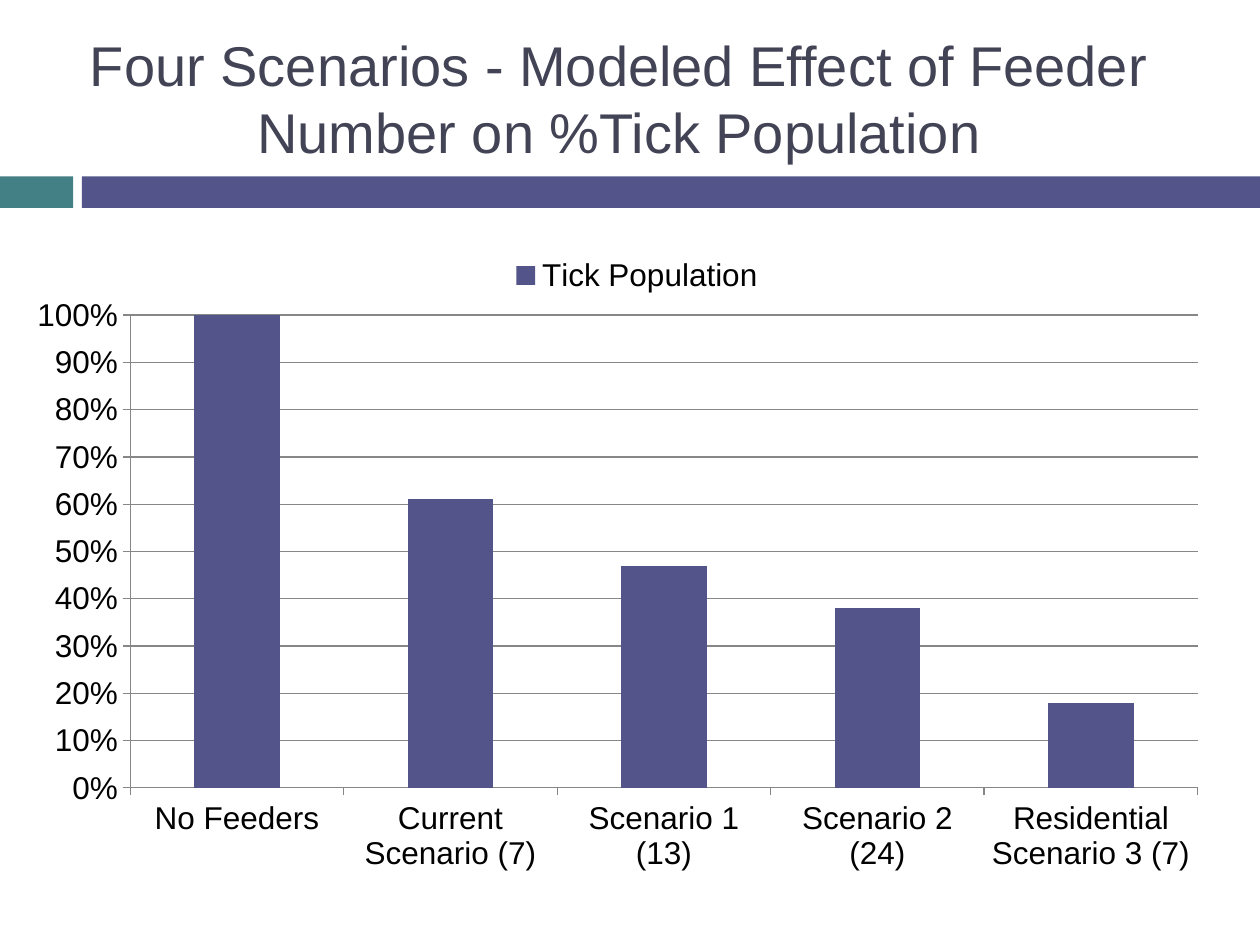
from dataclasses import dataclass

from lxml import etree
from pptx import Presentation
from pptx.chart.data import CategoryChartData
from pptx.dml.color import RGBColor
from pptx.enum.chart import XL_CHART_TYPE, XL_LEGEND_POSITION, XL_TICK_MARK
from pptx.enum.shapes import MSO_SHAPE
from pptx.enum.text import MSO_ANCHOR, MSO_AUTO_SIZE, PP_ALIGN
from pptx.oxml.ns import qn
from pptx.util import Emu, Pt

RECT = MSO_SHAPE.RECTANGLE
COLUMN = XL_CHART_TYPE.COLUMN_CLUSTERED
TOP = XL_LEGEND_POSITION.TOP
OUT = XL_TICK_MARK.OUTSIDE
CENTER = PP_ALIGN.CENTER
MIDDLE = MSO_ANCHOR.MIDDLE
NO_FIT = MSO_AUTO_SIZE.NONE
PX = 9144  # 100 px to the inch


@dataclass(frozen=True)
class Theme:
    font: str = "Arial"
    ink: RGBColor = RGBColor(0x42, 0x44, 0x56)
    text: RGBColor = RGBColor(0, 0, 0)
    teal: RGBColor = RGBColor(0x43, 0x80, 0x86)
    violet: RGBColor = RGBColor(0x53, 0x54, 0x8A)
    grid: RGBColor = RGBColor(0x87, 0x87, 0x87)
    title: int = 32
    label: int = 18


@dataclass(frozen=True)
class Box:
    left: int
    top: int
    width: int
    height: int

    def emu(self) -> list[Emu]:
        return [Emu(n * PX) for n in (self.left, self.top, self.width, self.height)]


@dataclass(frozen=True)
class Band:
    box: Box
    color: RGBColor


THEME = Theme()
BANDS = [
    Band(Box(0, 140, 58, 25), THEME.teal),
    Band(Box(65, 140, 935, 25), THEME.violet),
]
TITLE = "Four Scenarios - Modeled Effect of Feeder Number on %Tick Population"
TICKS = {
    "No Feeders": 1,
    "Current Scenario (7)": 0.61,
    "Scenario 1 (13)": 0.47,
    "Scenario 2 (24)": 0.38,
    "Residential Scenario 3 (7)": 0.18,
}


def draw_band(slide, band: Band) -> None:
    shape = slide.shapes.add_shape(RECT, *band.box.emu())
    shape.shadow.inherit = False
    shape.fill.solid()
    shape.fill.fore_color.rgb = band.color
    shape.line.fill.background()


def set_title(slide, box: Box, text: str) -> None:
    title = slide.shapes.title
    title.left, title.top, title.width, title.height = box.emu()
    frame = title.text_frame
    frame.word_wrap = True
    frame.auto_size = NO_FIT
    frame.vertical_anchor = MIDDLE
    para = frame.paragraphs[0]
    para.alignment = CENTER
    run = para.add_run()
    run.text = text
    run.font.name = THEME.font
    run.font.size = Pt(THEME.title)
    run.font.color.rgb = THEME.ink


def set_layout(layout, inner: bool, **parts: float) -> None:
    """Place a chart part by fractions of the chart's size."""
    manual = etree.SubElement(layout, qn("c:manualLayout"))
    values = {"layoutTarget": "inner"} if inner else {}
    values |= {"xMode": "edge", "yMode": "edge"} | parts
    for tag, value in values.items():
        etree.SubElement(manual, qn(f"c:{tag}")).set("val", str(value))


def draw_chart(slide, box: Box, name: str, values: dict[str, float]) -> None:
    data = CategoryChartData(number_format="0%")
    data.categories = list(values)
    data.add_series(name, list(values.values()))
    chart = slide.shapes.add_chart(COLUMN, *box.emu(), data).chart
    chart.has_title = False
    chart.font.name = THEME.font
    chart.font.size = Pt(THEME.label)
    chart.font.color.rgb = THEME.text

    # Columns
    plot = chart.plots[0]
    plot.vary_by_categories = False
    plot.gap_width = 150
    bars = plot.series[0]
    bars.format.fill.solid()
    bars.format.fill.fore_color.rgb = THEME.violet

    # Axes and grid
    scale = chart.value_axis
    scale.minimum_scale, scale.maximum_scale, scale.major_unit = 0, 1, 0.1
    scale.has_major_gridlines = True
    scale.tick_labels.number_format = "0%"
    scale.tick_labels.number_format_is_linked = False
    for axis in (scale, chart.category_axis):
        axis.major_tick_mark = OUT
    for part in (scale, chart.category_axis, scale.major_gridlines):
        part.format.line.color.rgb = THEME.grid
        part.format.line.width = Pt(0.75)

    # Legend and plot places
    chart.has_legend = True
    legend = chart.legend
    legend.position = TOP
    legend.include_in_layout = False
    area = chart.element.find(".//" + qn("c:plotArea"))
    layout = area.find(qn("c:layout"))
    if layout is None:
        layout = etree.Element(qn("c:layout"))
        area.insert(0, layout)
    set_layout(layout, True, x=0.084, y=0.109, w=0.908, h=0.704)
    node = chart.element.find(".//" + qn("c:legend"))
    spot = node.find(qn("c:layout"))
    if spot is None:
        spot = etree.Element(qn("c:layout"))
        node.find(qn("c:legendPos")).addnext(spot)
    set_layout(spot, False, x=0.4, y=0.01, w=0.23, h=0.08)


def main() -> None:
    deck = Presentation()
    deck.slide_width, deck.slide_height = Emu(1000 * PX), Emu(750 * PX)
    slide = deck.slides.add_slide(deck.slide_layouts[5])

    # Header
    for band in BANDS:
        draw_band(slide, band)
    set_title(slide, Box(25, 30, 933, 95), TITLE)

    # Chart
    draw_chart(slide, Box(25, 192, 933, 533), "Tick Population", TICKS)
    deck.save("out.pptx")


if __name__ == "__main__":
    main()
